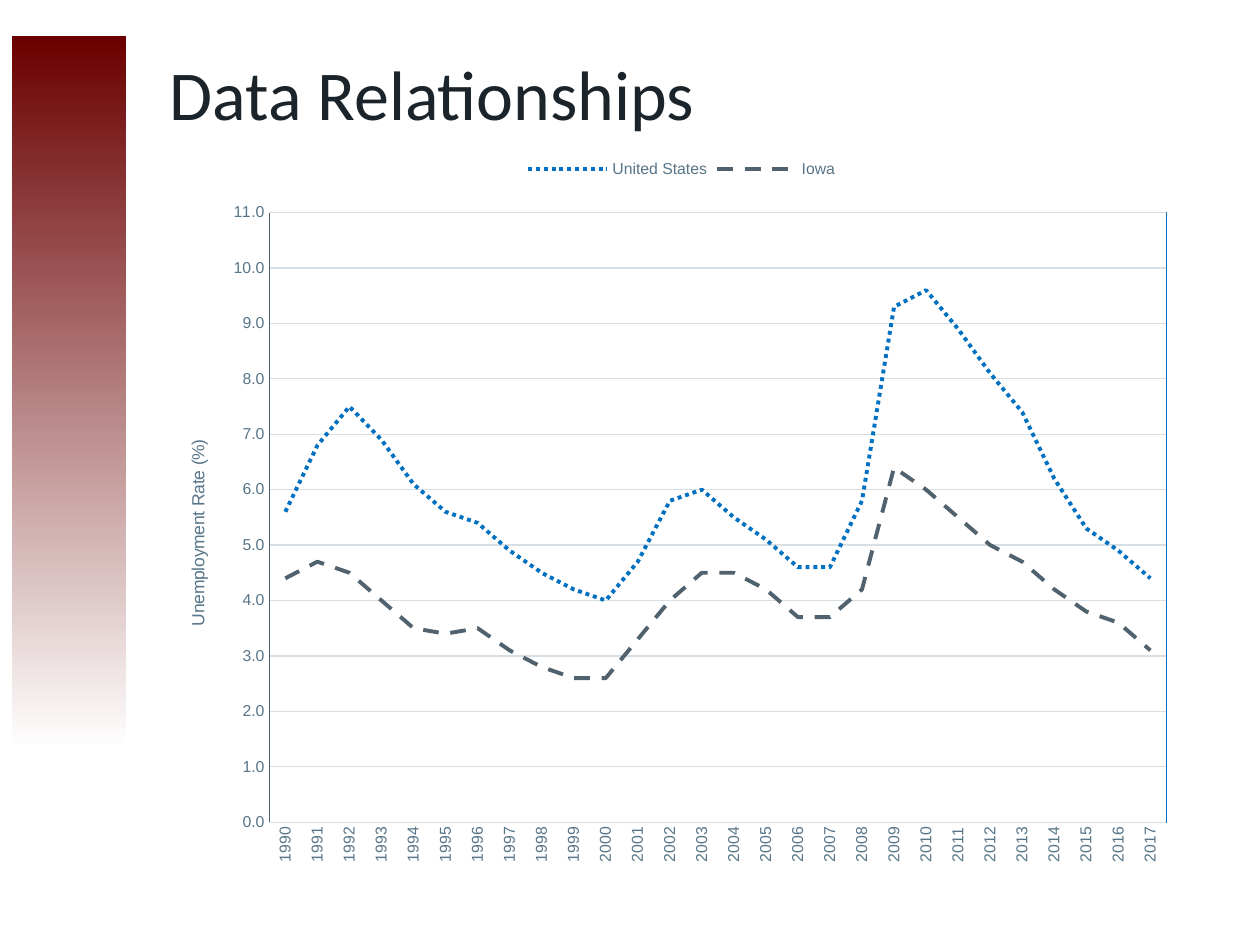
from lxml.etree import fromstring
from pptx import Presentation
from pptx.chart.data import CategoryChartData
from pptx.dml.color import RGBColor
from pptx.enum.chart import XL_CHART_TYPE, XL_LEGEND_POSITION, XL_TICK_MARK
from pptx.enum.dml import MSO_LINE
from pptx.enum.shapes import MSO_SHAPE
from pptx.enum.text import MSO_ANCHOR
from pptx.oxml.ns import nsdecls, qn
from pptx.util import Pt

MAROON = RGBColor(0x6A, 0x00, 0x00)
WHITE = RGBColor(0xFF, 0xFF, 0xFF)
INK = RGBColor(0x1B, 0x24, 0x2A)
MUTED = RGBColor(0x57, 0x75, 0x88)
GRID = RGBColor(0xD7, 0xDF, 0xE5)
BLUE = RGBColor(0x00, 0x70, 0xC0)
SLATE = RGBColor(0x51, 0x62, 0x6F)

UNITED_STATES = [5.6, 6.8, 7.5, 6.9, 6.1, 5.6, 5.4, 4.9, 4.5, 4.2, 4, 4.7, 5.8, 6,
                 5.5, 5.1, 4.6, 4.6, 5.8, 9.3, 9.6, 8.9, 8.1, 7.4, 6.2, 5.3, 4.9, 4.4]
IOWA = [4.4, 4.7, 4.5, 4, 3.5, 3.4, 3.5, 3.1, 2.8, 2.6, 2.6, 3.3, 4, 4.5,
        4.5, 4.2, 3.7, 3.7, 4.2, 6.4, 6, 5.5, 5, 4.7, 4.2, 3.8, 3.6, 3.1]


def style_font(font, size, color, name="Arial"):
    font.size = Pt(size)
    font.name = name
    font.bold = False
    font.color.rgb = color


def style_line(line, color, width):
    line.color.rgb = color
    line.width = Pt(width)


prs = Presentation()
prs.slide_width, prs.slide_height = Pt(720), Pt(540)
slide = prs.slides.add_slide(prs.slide_layouts[6])

side_band = slide.shapes.add_shape(MSO_SHAPE.RECTANGLE, Pt(7), Pt(20.75), Pt(65.25), Pt(443.5))
side_band.shadow.inherit = False
side_band.line.fill.background()
side_band.fill.gradient()
side_band.fill.gradient_angle = 270
for stop, color, position in zip(side_band.fill.gradient_stops, (MAROON, WHITE), (0, 0.92)):
    stop.color.rgb = color
    stop.position = position

rates = CategoryChartData(number_format="#0.0")
rates.categories = [str(year) for year in range(1990, 2018)]
rates.add_series("United States", UNITED_STATES)
rates.add_series("Iowa", IOWA)
chart = slide.shapes.add_chart(
    XL_CHART_TYPE.LINE, Pt(101.5), Pt(83.5), Pt(576), Pt(413.25), rates).chart
style_font(chart.font, 10, INK)
chart.has_title = False
chart.has_legend = True
chart.legend.position = XL_LEGEND_POSITION.TOP
chart.legend.include_in_layout = False
style_font(chart.legend.font, 9, MUTED)

plot = chart.plots[0]
plot.vary_by_categories = False
for series, color, dash in zip(plot.series, (BLUE, SLATE), (MSO_LINE.ROUND_DOT, MSO_LINE.DASH)):
    series.smooth = False
    style_line(series.format.line, color, 2.25)
    series.format.line.dash_style = dash

years = chart.category_axis
percent = chart.value_axis
for axis in (years, percent):
    axis.major_tick_mark = XL_TICK_MARK.NONE
    axis.minor_tick_mark = XL_TICK_MARK.NONE
    style_font(axis.tick_labels.font, 9, MUTED)
style_line(years.format.line, GRID, 0.75)
years._element.find(qn("c:txPr")).find(qn("a:bodyPr")).set("rot", "-5400000")

percent.minimum_scale, percent.maximum_scale, percent.major_unit = 0, 11, 1
percent.tick_labels.number_format = "#0.0"
percent.tick_labels.number_format_is_linked = False
style_line(percent.format.line, SLATE, 0.75)
style_line(percent.major_gridlines.format.line, GRID, 0.75)
rate_label = percent.axis_title.text_frame.paragraphs[0].add_run()
rate_label.text = "Unemployment Rate (%)"
style_font(rate_label.font, 10, MUTED)

chart_space = chart._chartSpace
chart_space.find(qn("c:txPr")).addprevious(fromstring(
    f'<c:spPr {nsdecls("c", "a")}><a:solidFill><a:srgbClr val="{WHITE}"/></a:solidFill>'
    '<a:ln><a:noFill/></a:ln></c:spPr>'))

plot_area = chart_space.chart.plotArea
for layout in plot_area.findall(qn("c:layout")):
    plot_area.remove(layout)
frame = {"x": 0.091, "y": 0.092, "w": 0.89, "h": 0.843}
extents = "".join(f'<c:{side} val="{share}"/>' for side, share in frame.items())
plot_area.insert(0, fromstring(
    f'<c:layout {nsdecls("c")}><c:manualLayout><c:layoutTarget val="inner"/>'
    f'<c:xMode val="edge"/><c:yMode val="edge"/>{extents}</c:manualLayout></c:layout>'))
plot_area.append(fromstring(
    f'<c:spPr {nsdecls("c", "a")}><a:noFill/><a:ln w="9525"><a:solidFill>'
    f'<a:srgbClr val="{BLUE}"/></a:solidFill></a:ln></c:spPr>'))

heading = slide.shapes.add_textbox(Pt(90), Pt(28), Pt(630), Pt(49.75)).text_frame
heading.word_wrap = True
heading.vertical_anchor = MSO_ANCHOR.MIDDLE
heading_run = heading.paragraphs[0].add_run()
heading_run.text = "Data Relationships"
style_font(heading_run.font, 40, INK, "Calibri")

prs.save("out.pptx")
